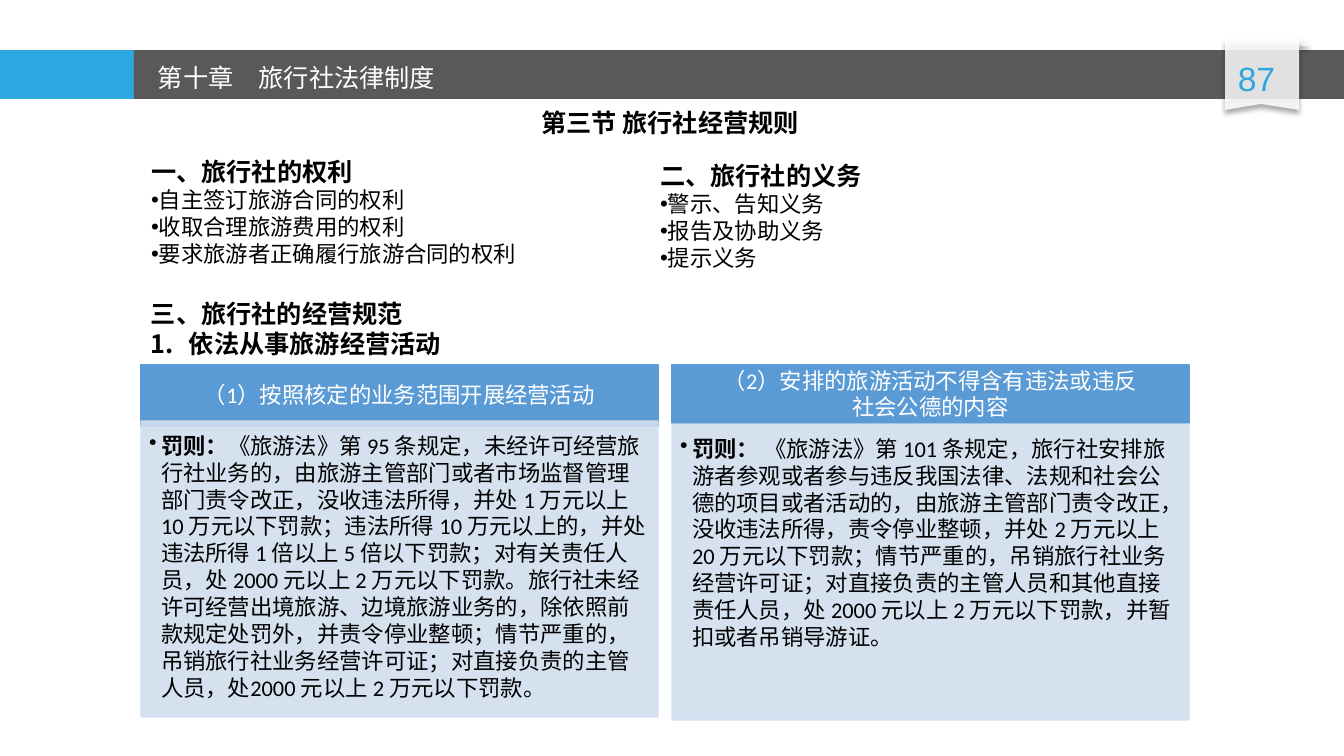
from pptx import Presentation
from pptx.dml.color import RGBColor
from pptx.enum.shapes import MSO_SHAPE
from pptx.enum.text import MSO_ANCHOR, MSO_AUTO_SIZE, PP_ALIGN
from pptx.oxml import parse_xml
from pptx.oxml.ns import nsdecls, qn
from pptx.util import Pt

PX = 9071
RECT, FOLD = MSO_SHAPE.RECTANGLE, MSO_SHAPE.RIGHT_TRIANGLE
TOP, MIDDLE = MSO_ANCHOR.TOP, MSO_ANCHOR.MIDDLE
LEFT, CENTER = PP_ALIGN.LEFT, PP_ALIGN.CENTER
FIXED = MSO_AUTO_SIZE.NONE
DOT = '<a:buChar {} char="•"/>'
NUMBER = '<a:buAutoNum {} type="arabicPeriod"/>'
PLAIN = '<a:buNone {}/>'

THEME = {
    "accent": "2EA7E0", "bar": "595959", "header": "5B9BD5", "panel": "D2DEEF",
    "fold": "F8F8F8", "white": "FFFFFF", "ink": "000000",
    "text": "Calibri", "chapter": "Noto Sans CJK SC", "number": "Arial",
    "page_size": 24, "head_size": 18, "body_size": 16, "leading": 1.2, "tight": 1.14,
}


def paint(shape, color, opacity=100, outlined=False):
    shape.shadow.inherit = False
    shape.fill.solid()
    shape.fill.fore_color.rgb = RGBColor.from_string(THEME[color])
    if outlined:
        shape.line.color.rgb = RGBColor.from_string(THEME[color])
        shape.line.width = Pt(1)
    else:
        shape.line.fill.background()
    if opacity < 100:
        for tone in shape._element.spPr.iter(qn("a:srgbClr")):
            tone.append(parse_xml(f'<a:alpha {nsdecls("a")} val="{opacity * 1000}"/>'))


def write(box, lines, size, color="ink", font="text", align=LEFT, anchor=TOP, leading="leading"):
    frame = box.text_frame
    frame.word_wrap = True
    frame.auto_size = FIXED
    frame.vertical_anchor = anchor
    for index, (text, points, bold, bullet, indent) in enumerate(lines):
        para = frame.paragraphs[0] if index == 0 else frame.add_paragraph()
        para.alignment = align
        para.line_spacing = Pt(THEME[points or size] * THEME[leading])
        para.space_before = para.space_after = Pt(0)
        properties = para._p.get_or_add_pPr()
        properties.set("marL", str(indent * PX))
        properties.set("indent", str(-indent * PX))
        properties.append(parse_xml(bullet.format(nsdecls("a"))))
        para.font.size = Pt(THEME[points or size])
        para.font.name = THEME[font]
        para.font.color.rgb = RGBColor.from_string(THEME[color])
        para.font.bold = bold
        for part, strong in text if isinstance(text, list) else [(text, bold)]:
            span = para.add_run()
            span.text = part
            span.font.bold = strong


deck = Presentation()
deck.slide_width, deck.slide_height = 1344 * PX, 756 * PX
page = deck.slides.add_slide(deck.slide_layouts[3])
shapes = page.shapes
title, rights, duties = page.placeholders

for left, width, color in [(0, 134, "accent"), (134, 1210, "bar")]:
    band = shapes.add_shape(RECT, left * PX, 50 * PX, width * PX, 49 * PX)
    paint(band, color)

fold = shapes.add_shape(FOLD, 1299 * PX, 38 * PX, 12 * PX, 8 * PX)
outline = shapes.build_freeform(1225, 110, scale=PX)
outline.add_line_segments([(1225, 40), (1299, 40), (1299, 110), (1261, 104)], close=True)
ribbon = outline.convert_to_shape()
for shape, color in [(fold, "fold"), (ribbon, "white")]:
    paint(shape, color, 85)
    effects = shape._element.spPr.find(qn("a:effectLst"))
    effects.append(parse_xml(
        f'<a:outerShdw {nsdecls("a")} blurRad="50800" dist="38100" dir="5400000">'
        '<a:srgbClr val="000000"><a:alpha val="40000"/></a:srgbClr></a:outerShdw>'))

page_number = shapes.add_textbox(1205 * PX, 53 * PX, 103 * PX, 50 * PX)
write(page_number, [("87", None, False, PLAIN, 0)], "page_size", "accent", "number", CENTER, MIDDLE)
chapter = shapes.add_textbox(148 * PX, 57 * PX, 508 * PX, 40 * PX)
write(chapter, [("第十章　旅行社法律制度", None, False, PLAIN, 0)], "head_size",
      "white", "chapter", anchor=MIDDLE)

title.left, title.top, title.width, title.height = 510 * PX, 102 * PX, 320 * PX, 40 * PX
write(title, [("第三节 旅行社经营规则", None, True, PLAIN, 0)], "head_size",
      align=CENTER, anchor=MIDDLE)

topics = [
    (rights, 141, 151, "一、旅行社的权利",
     ["自主签订旅游合同的权利", "收取合理旅游费用的权利", "要求旅游者正确履行旅游合同的权利"]),
    (duties, 650, 155, "二、旅行社的义务", ["警示、告知义务", "报告及协助义务", "提示义务"]),
]
for box, left, top, heading, items in topics:
    box.left, box.top, box.width, box.height = left * PX, top * PX, 480 * PX, 124 * PX
    write(box, [(heading, "head_size", True, PLAIN, 0)]
          + [(item, None, False, DOT, 0) for item in items], "body_size")

norms = shapes.add_textbox(141 * PX, 293 * PX, 1050 * PX, 72 * PX)
write(norms, [("三、旅行社的经营规范", None, True, PLAIN, 0),
              ("依法从事旅游经营活动", None, True, NUMBER, 38)], "head_size")

cards = [
    (141, 61, 421, ["（1）按照核定的业务范围开展经营活动"], "罚则：",
     "《旅游法》第 95 条规定，未经许可经营旅行社业务的，由旅游主管部门或者市场监督管理部门责令改正，"
     "没收违法所得，并处 1 万元以上10 万元以下罚款；违法所得 10 万元以上的，并处违法所得 1 倍以上 "
     "5 倍以下罚款；对有关责任人员，处 2000 元以上 2 万元以下罚款。旅行社未经许可经营出境旅游、"
     "边境旅游业务的，除依照前款规定处罚外，并责令停业整顿；情节严重的，吊销旅行社业务经营许可证；"
     "对直接负责的主管人员，处2000 元以上 2 万元以下罚款。"),
    (672, 58, 424, ["（2）安排的旅游活动不得含有违法或违反", "社会公德的内容"], "罚则： ",
     "《旅游法》第 101 条规定，旅行社安排旅游者参观或者参与违反我国法律、法规和社会公德的项目或者活动的，"
     "由旅游主管部门责令改正，没收违法所得，责令停业整顿，并处 2 万元以上 20 万元以下罚款；情节严重的，"
     "吊销旅行社业务经营许可证；对直接负责的主管人员和其他直接责任人员，处 2000 元以上 2 万元以下罚款，"
     "并暂扣或者吊销导游证。"),
]
for left, header_height, panel_top, heading, label, penalty in cards:
    header = shapes.add_shape(RECT, left * PX, 365 * PX, 517 * PX, header_height * PX)
    paint(header, "header", outlined=True)
    header.text_frame.margin_top = header.text_frame.margin_bottom = 0
    write(header, [(line, None, False, PLAIN, 0) for line in heading], "body_size",
          "white", align=CENTER, anchor=MIDDLE, leading="tight")
    panel = shapes.add_shape(RECT, left * PX, panel_top * PX, 517 * PX, 296 * PX)
    paint(panel, "panel", 90, outlined=True)
    frame = panel.text_frame
    frame.margin_left, frame.margin_top = 8 * PX, 11 * PX
    frame.margin_right, frame.margin_bottom = 11 * PX, 12 * PX
    write(panel, [([(label, True), (penalty, False)], None, False, DOT, 12)], "body_size")

deck.save("out.pptx")
